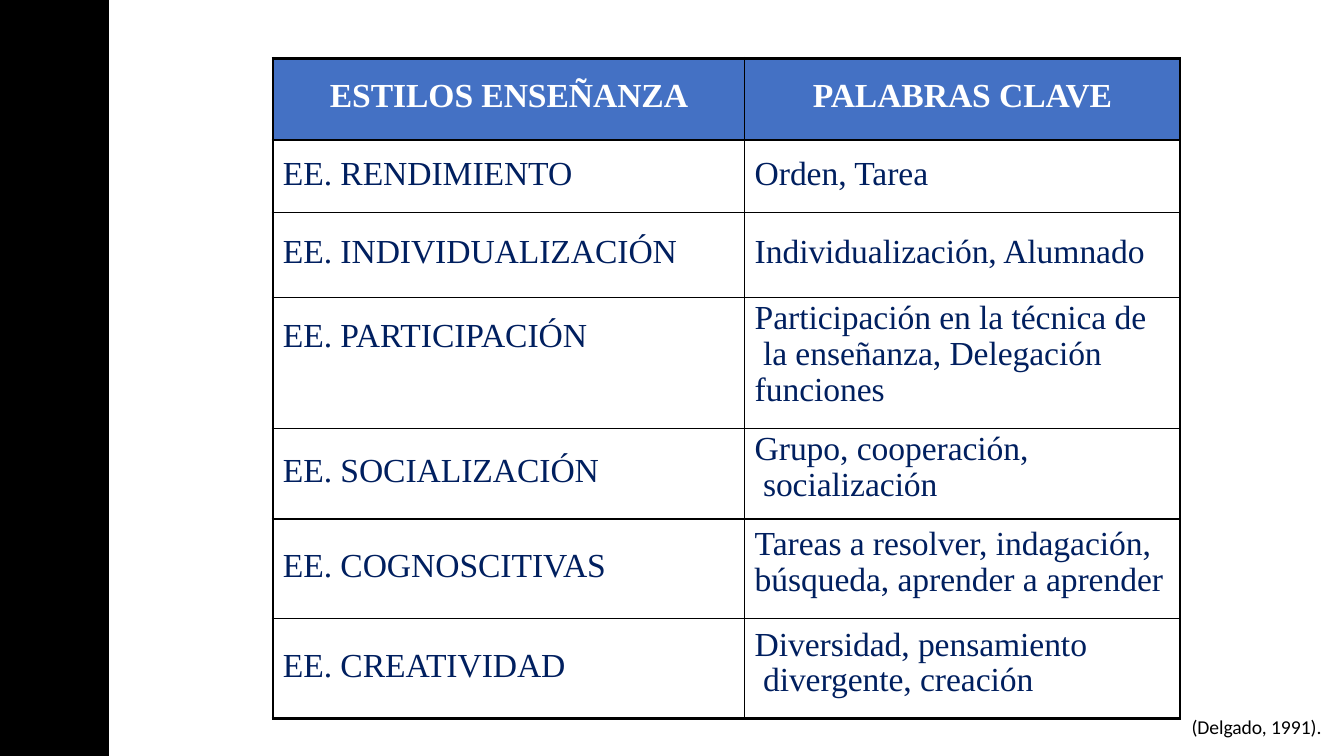
from lxml import etree
from pptx import Presentation
from pptx.dml.color import RGBColor
from pptx.enum import shapes, text
from pptx.oxml.ns import qn
from pptx.util import Cm, Pt

COLORS = {"black": "000000", "white": "FFFFFF", "header": "4471C4", "navy": "001F5F"}
TABLE_FONT = "Times New Roman"
THIN, THICK = Pt(1), Pt(2.25)

# Row height (cm), then per cell: top margin (cm) and lines of text
ROWS = [
    (2.06, (0.48, ["ESTILOS ENSEÑANZA"]), (0.48, ["PALABRAS CLAVE"])),
    (1.83, (0.38, ["EE. RENDIMIENTO"]), (0.38, ["Orden, Tarea"])),
    (2.13, (0.53, ["EE. INDIVIDUALIZACIÓN"]), (0.53, ["Individualización, Alumnado"])),
    (3.3, (0.51, ["EE. PARTICIPACIÓN"]),
     (0.1, ["Participación en la técnica de", " la enseñanza, Delegación", "funciones"])),
    (2.29, (0.61, ["EE. SOCIALIZACIÓN"]), (0.1, ["Grupo, cooperación,", " socialización"])),
    (2.51, (0.71, ["EE. COGNOSCITIVAS"]),
     (0.2, ["Tareas a resolver, indagación,", "búsqueda, aprender a aprender"])),
    (2.51, (0.74, ["EE. CREATIVIDAD"]),
     (0.23, ["Diversidad, pensamiento", " divergente, creación"])),
]
COLUMN_WIDTHS = [11.89, 10.97]
TABLE_LEFT, TABLE_TOP = 6.88, 1.47
CITATION = "(Delgado, 1991)."


def rgb(name):
    return RGBColor.from_string(COLORS[name])


def add_run(paragraph, content, font, size, color, bold=False):
    run = paragraph.add_run()
    run.text = content
    run.font.name = font
    run.font.size = Pt(size)
    run.font.bold = bold
    run.font.color.rgb = rgb(color)
    run.font._element.set("spc", "-5")


def set_borders(cell, widths):
    """Draw black borders; widths maps L, R, T and B, in that order."""
    properties = cell._tc.get_or_add_tcPr()
    for side, width in widths.items():
        line = etree.SubElement(properties, qn(f"a:ln{side}"), w=str(width))
        fill = etree.SubElement(line, qn("a:solidFill"))
        etree.SubElement(fill, qn("a:srgbClr"), val=COLORS["black"])


def fill_cell(cell, top_margin, lines, is_header):
    cell.margin_left = Cm(0 if is_header else 0.25)
    cell.margin_right = cell.margin_bottom = 0
    cell.margin_top = Cm(top_margin)
    if is_header:
        cell.fill.solid()
        cell.fill.fore_color.rgb = rgb("header")
    else:
        cell.fill.background()
    paragraph = cell.text_frame.paragraphs[0]
    paragraph.alignment = text.PP_ALIGN.CENTER if is_header else text.PP_ALIGN.LEFT
    if len(lines) > 1:
        paragraph.line_spacing = 0.96
    for number, line in enumerate(lines):
        if number:
            paragraph.add_line_break()
        add_run(paragraph, line, TABLE_FONT, 24, "white" if is_header else "navy", is_header)


def add_side_band(slide, height):
    band = slide.shapes.add_shape(shapes.MSO_SHAPE.RECTANGLE, 0, 0, Cm(2.74), height)
    band.shadow.inherit = False
    band.fill.solid()
    band.fill.fore_color.rgb = rgb("black")
    band.line.color.rgb = rgb("black")
    band.line.width = THIN


def add_styles_table(slide):
    table = slide.shapes.add_table(
        len(ROWS), len(COLUMN_WIDTHS), Cm(TABLE_LEFT), Cm(TABLE_TOP),
        Cm(sum(COLUMN_WIDTHS)), Cm(sum(row[0] for row in ROWS))).table
    table.horz_banding = False
    for column, width in zip(table.columns, COLUMN_WIDTHS):
        column.width = Cm(width)
    last_row, last_column = len(ROWS) - 1, len(COLUMN_WIDTHS) - 1
    for r, (height, *cells) in enumerate(ROWS):
        table.rows[r].height = Cm(height)
        for c, (top_margin, lines) in enumerate(cells):
            cell = table.cell(r, c)
            outer = {"L": c == 0, "R": c == last_column, "T": r == 0, "B": r == last_row}
            set_borders(cell, {side: THICK if edge else THIN for side, edge in outer.items()})
            fill_cell(cell, top_margin, lines, is_header=r == 0)


def add_citation(slide):
    frame = slide.shapes.add_textbox(Cm(30), Cm(17.98), Cm(3.38), Cm(0.66)).text_frame
    frame.word_wrap = True
    frame.margin_left = frame.margin_top = Cm(0.03)
    frame.margin_right = frame.margin_bottom = 0
    add_run(frame.paragraphs[0], CITATION, "Calibri", 14, "black")


def main():
    deck = Presentation()
    deck.slide_width, deck.slide_height = Cm(33.87), Cm(19.05)
    slide = deck.slides.add_slide(deck.slide_layouts[6])
    add_side_band(slide, deck.slide_height)
    add_styles_table(slide)
    add_citation(slide)
    deck.save("out.pptx")


if __name__ == "__main__":
    main()
